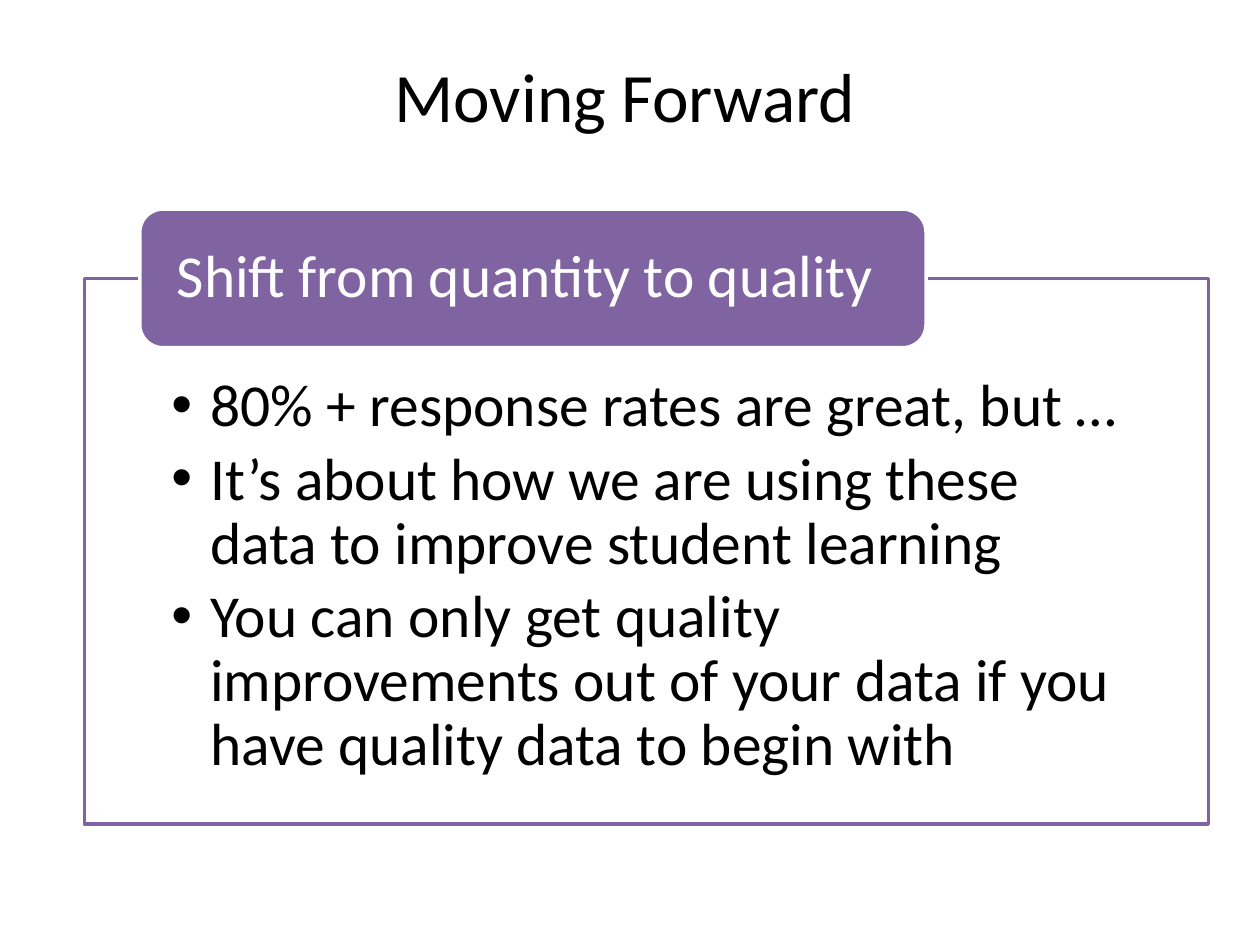
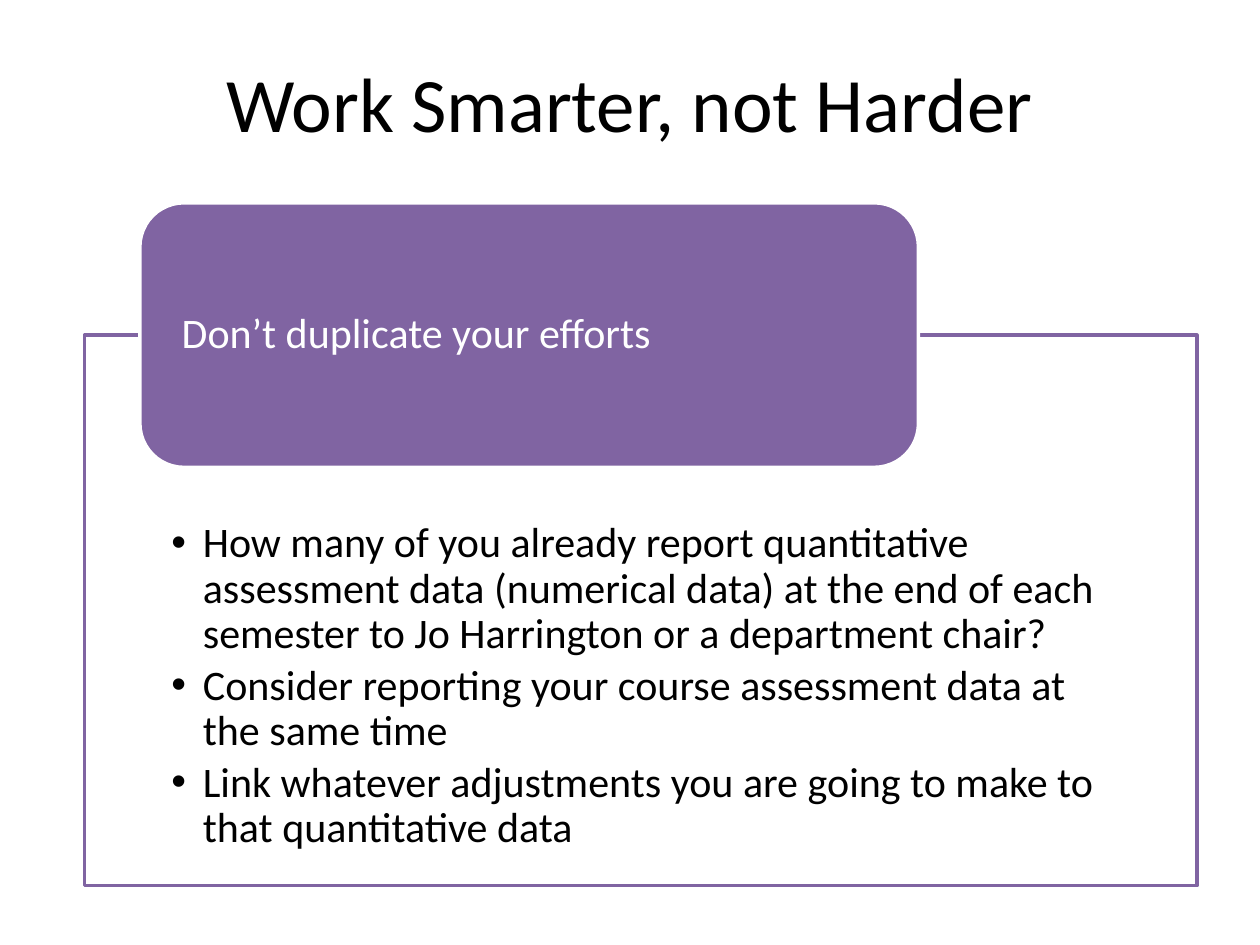
from pptx import Presentation
from pptx.dml.color import RGBColor
from pptx.enum.shapes import MSO_SHAPE
from pptx.enum.text import MSO_ANCHOR, MSO_AUTO_SIZE, PP_ALIGN
from pptx.util import Inches, Pt

ROUNDED = MSO_SHAPE.ROUNDED_RECTANGLE
TOP, MIDDLE, BOTTOM = MSO_ANCHOR.TOP, MSO_ANCHOR.MIDDLE, MSO_ANCHOR.BOTTOM
LEFT, CENTER = PP_ALIGN.LEFT, PP_ALIGN.CENTER
NO_AUTOFIT = MSO_AUTO_SIZE.NONE

COLORS = {"purple": "8064A2", "white": "FFFFFF", "black": "000000"}
FONT = "Calibri"
LINE_WIDTH = Pt(2)
TITLE_AND_CONTENT = 1


class Deck:
    """Holds the shared style and the slide being built."""

    def __init__(self):
        self.presentation = Presentation()
        self.presentation.slide_width = Inches(10)
        self.presentation.slide_height = Inches(7.5)
        self.slide = None

    def add_slide(self):
        layout = self.presentation.slide_layouts[TITLE_AND_CONTENT]
        self.slide = self.presentation.slides.add_slide(layout)

    def color(self, name):
        return RGBColor.from_string(COLORS[name])

    def place(self, shape, box):
        shape.left, shape.top, shape.width, shape.height = map(Inches, box)

    def paint(self, shape, fill, line):
        shape.fill.solid()
        shape.fill.fore_color.rgb = self.color(fill)
        shape.line.color.rgb = self.color(line)
        shape.line.width = LINE_WIDTH

    def set_frame(self, shape, anchor, insets):
        frame = shape.text_frame
        frame.word_wrap = True
        frame.auto_size = NO_AUTOFIT
        frame.vertical_anchor = anchor
        (frame.margin_left, frame.margin_top,
         frame.margin_right, frame.margin_bottom) = map(Inches, insets)
        return frame

    def add_text(self, paragraph, text, size, color, align=LEFT, spacing=0.9):
        paragraph.alignment = align
        paragraph.line_spacing = spacing
        paragraph.space_before = Pt(0)
        run = paragraph.add_run()
        run.text = text
        run.font.name = FONT
        run.font.size = Pt(size)
        run.font.color.rgb = self.color(color)

    def title(self, text, box, size, anchor):
        shape = self.slide.shapes.title
        self.place(shape, box)
        frame = self.set_frame(shape, anchor, (0.1, 0.05, 0.1, 0.05))
        self.add_text(frame.paragraphs[0], text, size, "black", CENTER, 1.0)

    def bullet_panel(self, items, box, size, insets, indent):
        """Outlined body placeholder with a bulleted list."""
        shape = self.slide.placeholders[1]
        self.place(shape, box)
        self.paint(shape, "white", "purple")
        frame = self.set_frame(shape, TOP, insets)
        for index, item in enumerate(items):
            paragraph = frame.add_paragraph() if index else frame.paragraphs[0]
            properties = paragraph._p.get_or_add_pPr()
            properties.set("marL", str(Inches(indent)))
            properties.set("indent", str(-Inches(indent)))
            self.add_text(paragraph, item, size, "black")
            paragraph.space_after = Pt(round(size * 0.15, 1))

    def heading_tab(self, text, box, size, inset):
        """Rounded heading that overlaps the top edge of the panel."""
        shape = self.slide.shapes.add_shape(ROUNDED, *map(Inches, box))
        shape.shadow.inherit = False
        self.paint(shape, "purple", "white")
        frame = self.set_frame(shape, MIDDLE, (inset, 0, inset, 0))
        self.add_text(frame.paragraphs[0], text, size, "white")


def main():
    deck = Deck()

    deck.add_slide()
    deck.title("Moving Forward", (0.42, 0.38, 9.08, 0.75), 39.6, BOTTOM)
    deck.bullet_panel(
        ["80% + response rates are great, but …",
         "It’s about how we are using these data to improve student learning",
         "You can only get quality improvements out of your data if you have "
         "quality data to begin with"],
        (0.67, 2.21, 8.92, 4.33), 34, (0.69, 0.77, 0.69, 0.26), 0.31)
    deck.heading_tab("Shift from quantity to quality",
                     (1.11, 1.66, 6.24, 1.1), 34, 0.24)

    deck.add_slide()
    deck.title("Work Smarter, not Harder", (0.5, 0.18, 9, 1.25), 44, MIDDLE)
    deck.bullet_panel(
        ["How many of you already report quantitative assessment data "
         "(numerical data) at the end of each semester to Jo Harrington or a "
         "department chair?",
         "Consider reporting your course assessment data at the same time",
         "Link whatever adjustments you are going to make to that "
         "quantitative data"],
        (0.67, 2.66, 8.83, 4.37), 24, (0.69, 1.48, 0.69, 0.19), 0.25)
    deck.heading_tab("Don’t duplicate your efforts",
                     (1.11, 1.61, 6.18, 2.1), 24, 0.23)

    deck.presentation.save("out.pptx")


if __name__ == "__main__":
    main()
